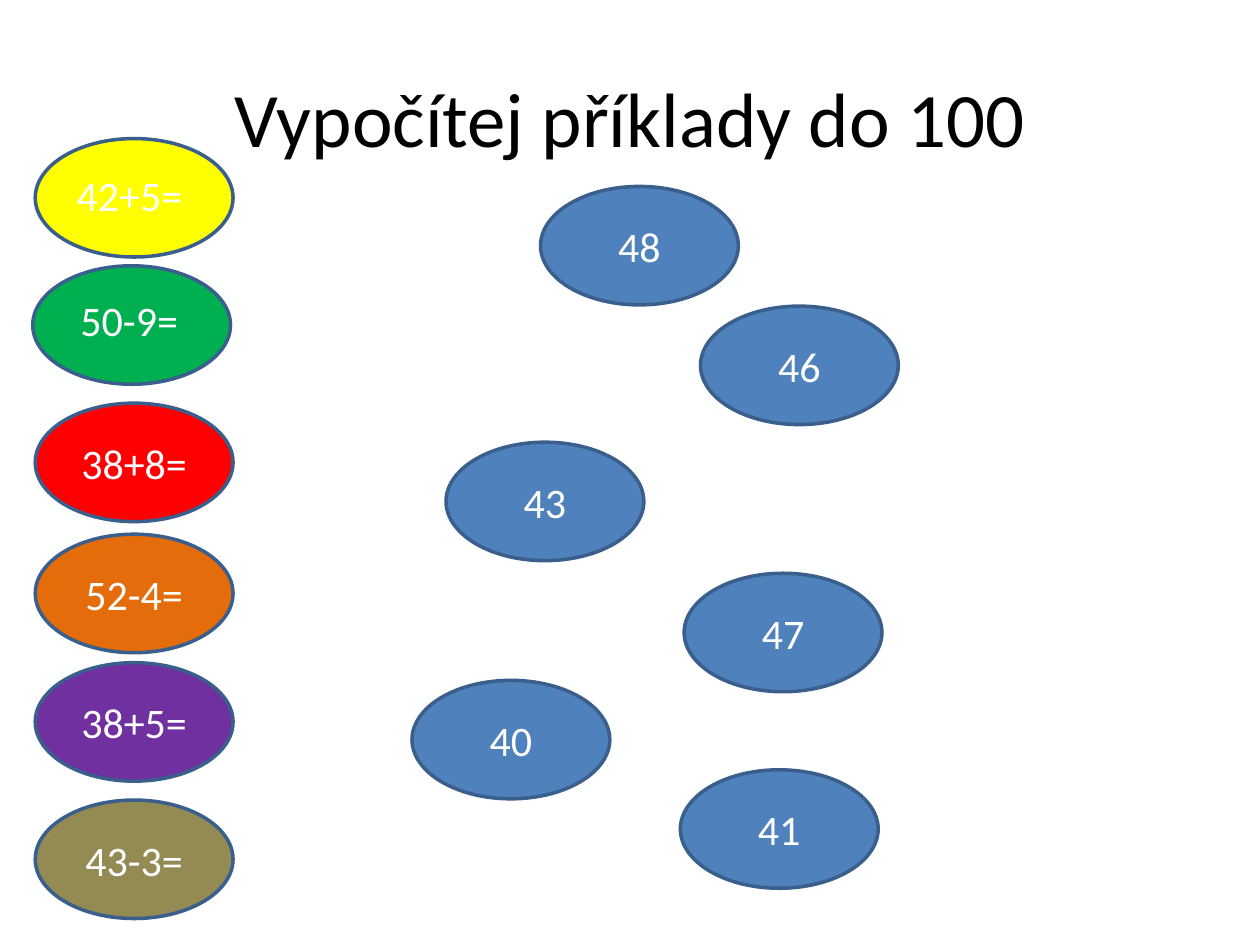
from pptx import Presentation
from pptx import util as u
from pptx.dml.color import RGBColor
from pptx.enum import shapes, text

WHITE = "FFFFFF"
BLUE = "4F81BD"
OUTLINE = "3A5F8C"
OVAL_WIDTH, OVAL_HEIGHT = 1.57, 0.94

PROBLEMS = [
    ("", 0.28, 1.1, "FFFF00"),
    ("", 0.26, 2.11, "00B050"),
    ("38+8=", 0.28, 3.2, "FF0000"),
    ("52-4=", 0.28, 4.24, "E46C0A"),
    ("38+5=", 0.28, 5.26, "7030A0"),
    ("43-3=", 0.28, 6.35, "948A54"),
]
LABELS = [("42+5=", 0.51, 1.3, 1.89), ("50-9=", 0.54, 2.29, 1.18)]
ANSWERS = [
    ("48", 4.29, 1.48),
    ("46", 5.56, 2.43),
    ("43", 3.54, 3.51),
    ("47", 5.43, 4.55),
    ("40", 3.27, 5.4),
    ("41", 5.4, 6.11),
]


def color(value):
    return RGBColor.from_string(value)


def write(frame, words, size, ink, align, anchor):
    for name, value in {"word_wrap": True, "vertical_anchor": anchor}.items():
        setattr(frame, name, value)
    paragraph = frame.paragraphs[0]
    paragraph.alignment = align
    run = paragraph.add_run()
    run.text = words
    for name, value in {"name": "Calibri", "size": u.Pt(size)}.items():
        setattr(run.font, name, value)
    run.font.color.rgb = color(ink)


def set_title(slide, words):
    title = slide.shapes.title
    box = {"left": 0.5, "top": 0.3, "width": 9, "height": 1.25}
    for name, value in box.items():
        setattr(title, name, u.Inches(value))
    write(title.text_frame, words, 44, "000000",
          text.PP_ALIGN.CENTER, text.MSO_ANCHOR.MIDDLE)


def add_oval(slide, words, left, top, fill):
    oval = slide.shapes.add_shape(
        shapes.MSO_SHAPE.OVAL, u.Inches(left), u.Inches(top),
        u.Inches(OVAL_WIDTH), u.Inches(OVAL_HEIGHT))
    oval.shadow.inherit = False
    oval.fill.solid()
    oval.fill.fore_color.rgb = color(fill)
    oval.line.color.rgb = color(OUTLINE)
    oval.line.width = u.Pt(2)
    if words:
        write(oval.text_frame, words, 24, WHITE,
              text.PP_ALIGN.CENTER, text.MSO_ANCHOR.MIDDLE)


def add_label(slide, words, left, top, width):
    label = slide.shapes.add_textbox(
        u.Inches(left), u.Inches(top), u.Inches(width), u.Inches(0.5))
    write(label.text_frame, words, 24, WHITE,
          text.PP_ALIGN.LEFT, text.MSO_ANCHOR.TOP)
    label.text_frame.auto_size = text.MSO_AUTO_SIZE.SHAPE_TO_FIT_TEXT


def main():
    deck = Presentation()
    deck.slide_width, deck.slide_height = u.Inches(10), u.Inches(7.5)
    slide = deck.slides.add_slide(deck.slide_layouts[5])
    set_title(slide, "Vypočítej příklady do 100")
    for problem in PROBLEMS:
        add_oval(slide, *problem)
    for answer in ANSWERS:
        add_oval(slide, *answer, BLUE)
    for label in LABELS:
        add_label(slide, *label)
    deck.save("out.pptx")


if __name__ == "__main__":
    main()
